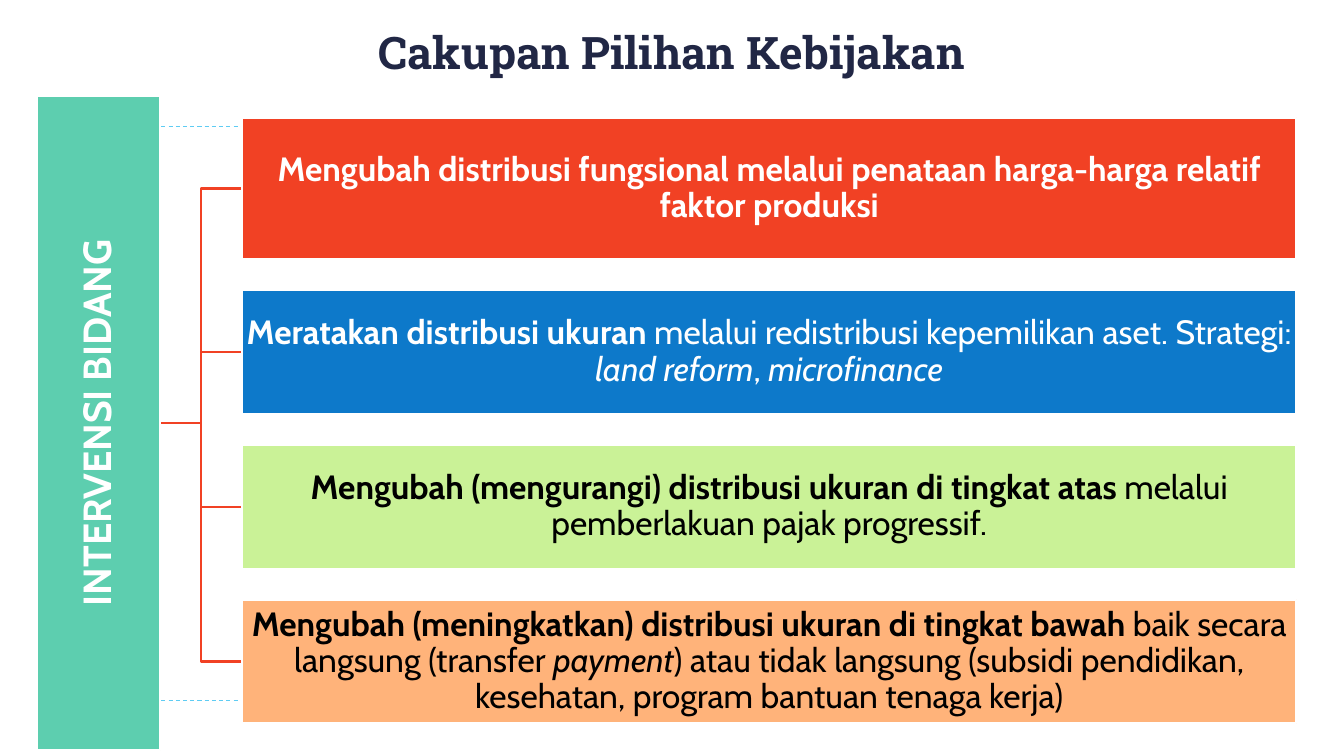
from dataclasses import dataclass

from lxml.etree import SubElement
from pptx import Presentation
from pptx.dml.color import RGBColor
from pptx.enum.dml import MSO_LINE as Dash
from pptx.enum.shapes import MSO_CONNECTOR as Connector, MSO_SHAPE as Shape
from pptx.enum.text import MSO_ANCHOR as Anchor, MSO_AUTO_SIZE as AutoSize, PP_ALIGN as Align
from pptx.oxml.ns import qn
from pptx.util import Cm, Pt

WHITE, BLACK, NAVY = "FFFFFF", "000000", "212745"
RED, BLUE, LIME, PEACH = "F14124", "0D79CA", "CAF297", "FFB37A"
TEAL, SKY = "5DCEAF", "5ECCF3"
BOLD, PLAIN, ITALIC = {"bold": True}, {"bold": False}, {"bold": False, "italic": True}

# fill, text colour, height in cm, spans
POLICIES = [
    (RED, WHITE, 3.56, [
        ("Mengubah distribusi fungsional melalui penataan harga-harga relatif faktor produksi", BOLD)]),
    (BLUE, WHITE, 3.12, [
        ("Meratakan distribusi ukuran ", BOLD),
        ("melalui redistribusi kepemilikan aset. Strategi: ", PLAIN),
        ("land reform", ITALIC), (", ", PLAIN), ("microfinance", ITALIC)]),
    (LIME, BLACK, 3.12, [
        ("Mengubah (mengurangi) distribusi ukuran di tingkat atas ", BOLD),
        ("melalui pemberlakuan pajak progressif.", PLAIN)]),
    (PEACH, BLACK, 3.12, [
        ("Mengubah (meningkatkan) distribusi ukuran di tingkat bawah ", BOLD),
        ("baik secara langsung (transfer ", PLAIN), ("payment", ITALIC),
        (") atau tidak langsung (subsidi pendidikan, kesehatan, program bantuan tenaga kerja)", PLAIN)]),
]


@dataclass
class Box:
    """A rectangle in centimetres."""
    left: float
    top: float
    width: float
    height: float

    @property
    def middle(self):
        return self.top + self.height / 2

    def lengths(self):
        return [Cm(n) for n in (self.left, self.top, self.width, self.height)]


def colour(value):
    return RGBColor.from_string(value)


def write(frame, spans, **font):
    """Fill the frame with one centred paragraph of (text, format) spans."""
    para = frame.paragraphs[0]
    para.alignment = Align.CENTER
    for text, style in spans:
        span = para.add_run()
        span.text = text
        values = font | style
        span.font.color.rgb = colour(values.pop("color"))
        for name, value in values.items():
            setattr(span.font, name, value)
    return para


def add_title(page, box, text):
    title = page.shapes.title
    title.left, title.top, title.width, title.height = box.lengths()
    frame = title.text_frame
    for name, value in {"auto_size": AutoSize.NONE, "vertical_anchor": Anchor.BOTTOM,
                        "word_wrap": True}.items():
        setattr(frame, name, value)
    write(frame, [(text, BOLD)], name="Roboto Slab", size=Pt(32), color=NAVY)


def add_rules(page, box):
    """Draw dashed lines along the top and bottom of the box."""
    for y in (box.top, box.top + box.height):
        rule = page.shapes.add_connector(
            Connector.STRAIGHT, Cm(box.left), Cm(y), Cm(box.left + box.width), Cm(y))
        rule.line.color.rgb = colour(SKY)
        rule.line.width = Pt(0.75)
        rule.line.dash_style = Dash.DASH
        SubElement(rule._element.spPr, qn("a:effectLst"))


def add_block(page, box, fill, spans, size, color, rotation=0):
    block = page.shapes.add_shape(Shape.RECTANGLE, *box.lengths())
    block.shadow.inherit = False
    block.rotation = rotation
    block.fill.solid()
    block.fill.fore_color.rgb = colour(fill)
    block.line.color.rgb = colour(WHITE)
    block.line.width = Pt(1.5)
    frame = block.text_frame
    margins = {f"margin_{side}": Cm(0.05) for side in ("left", "top", "right", "bottom")}
    for name, value in {"word_wrap": True, "vertical_anchor": Anchor.MIDDLE, **margins}.items():
        setattr(frame, name, value)
    para = write(frame, spans, name="Cabin", size=Pt(size), color=color)
    para.line_spacing = 0.9


def add_branch(page, start, end):
    """Draw an elbow that turns halfway between two (x, y) points."""
    bend = (start[0] + end[0]) / 2
    points = [start, (bend, start[1]), (bend, end[1]), end]
    corners = [(Cm(x), Cm(y)) for x, y in points]
    builder = page.shapes.build_freeform(*corners[0])
    builder.add_line_segments(corners[1:], close=False)
    branch = builder.convert_to_shape()
    branch.shadow.inherit = False
    branch.fill.background()
    branch.line.color.rgb = colour(RED)
    branch.line.width = Pt(1.5)


def add_hierarchy(page, box):
    """Draw the upright bar, the policy blocks and the branches between them."""
    thickness, blocks_left, gap = 3.12, box.left + 5.18, 0.78
    top = box.top + 0.55
    blocks = []
    for _, _, height, _ in POLICIES:
        blocks.append(Box(blocks_left, top, box.left + box.width - blocks_left, height))
        top += height + gap

    root = (box.left + thickness, box.middle)
    for block in reversed(blocks):
        add_branch(page, root, (block.left, block.middle))

    bar = Box(box.left + (thickness - box.height) / 2, box.middle - thickness / 2,
              box.height, thickness)
    add_block(page, bar, TEAL, [("INTERVENSI BIDANG", BOLD)], 28, WHITE, rotation=270)
    for block, (fill, color, _, spans) in zip(blocks, POLICIES):
        add_block(page, block, fill, spans, 24, color)


def main():
    deck = Presentation()
    deck.slide_width, deck.slide_height = Cm(33.87), Cm(19.05)
    page = deck.slides.add_slide(deck.slide_layouts[5])
    add_rules(page, Box(1.7, 3.18, 30.48, 14.47))
    add_hierarchy(page, Box(0.92, 2.42, 31.75, 16.48))
    add_title(page, Box(0, 0, 33.87, 2.1), "Cakupan Pilihan Kebijakan")
    deck.save("out.pptx")


if __name__ == "__main__":
    main()
